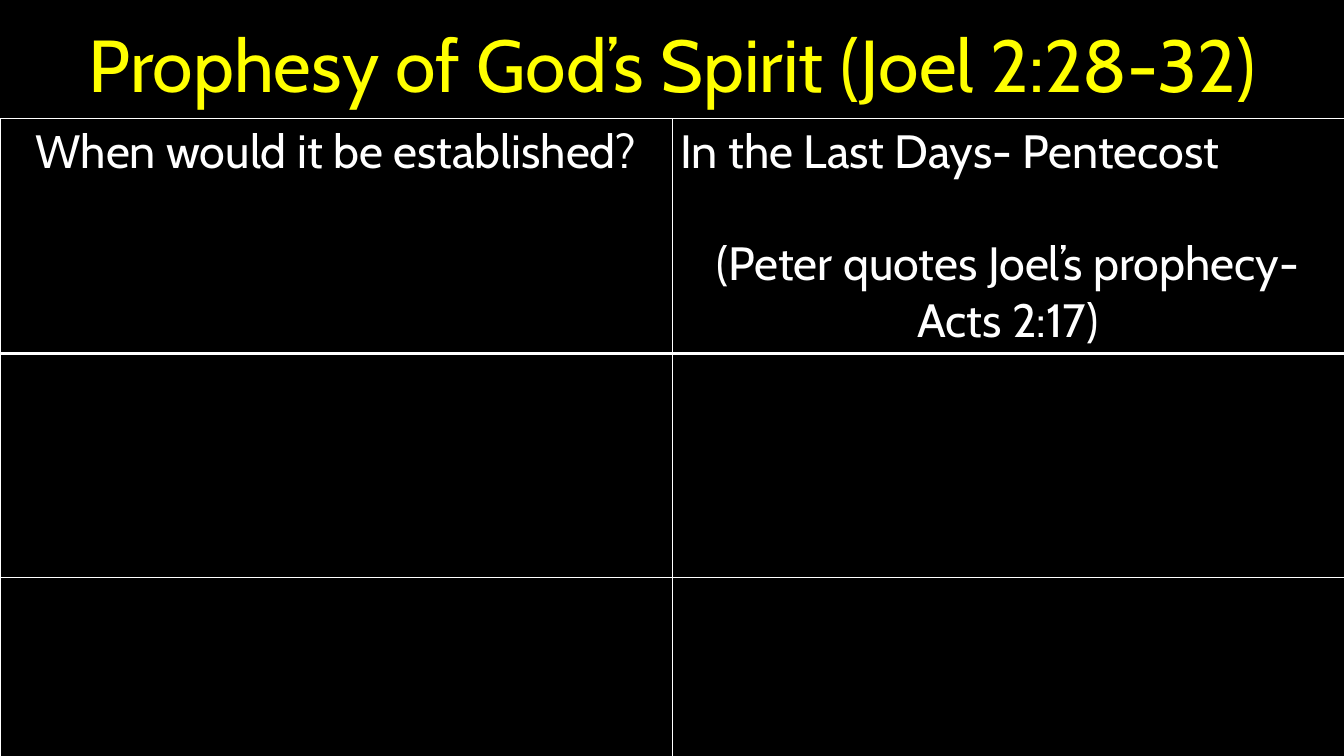
"""Build the slide on the prophecy of Joel with its question table."""
from dataclasses import dataclass

from lxml.etree import SubElement as Sub
from pptx import Presentation
from pptx.dml.color import RGBColor as Rgb
from pptx.enum.text import MSO_ANCHOR as Anchor, PP_ALIGN as Align
from pptx.oxml.ns import qn
from pptx.util import Emu, Pt


@dataclass(frozen=True)
class Theme:
    font: str = "Cabin"
    back: str = "000000"
    head: str = "FFFF00"
    text: str = "FFFFFF"
    rule: str = "FFFFFF"
    big: int = 63
    body: int = 40
    thin: int = 1
    thick: int = 3


def px(num):
    return Emu(round(num * 914400 / 84))


class Deck:
    def __init__(self, theme, wide, high):
        self.theme = theme
        self.prs = Presentation()
        self.prs.slide_width, self.prs.slide_height = px(wide), px(high)
        self.slide = self.prs.slides.add_slide(self.prs.slide_layouts[5])
        self.paint(self.slide.background.fill, theme.back)

    def paint(self, fill, color):
        fill.solid()
        fill.fore_color.rgb = Rgb.from_string(color)

    def add_text(self, para, text, size, color, align=Align.CENTER):
        para.alignment = align
        run = para.add_run()
        run.text = text
        run.font.name = self.theme.font
        run.font.size = Pt(size)
        run.font.bold = False
        run.font.color.rgb = Rgb.from_string(color)

    def title(self, text, left, top, wide, high):
        shape = self.slide.shapes.title
        shape.left, shape.top = px(left), px(top)
        shape.width, shape.height = px(wide), px(high)
        frame = shape.text_frame
        frame.word_wrap = True
        frame.vertical_anchor = Anchor.MIDDLE
        frame.margin_left = frame.margin_right = px(12)
        frame.margin_top = frame.margin_bottom = px(6)
        self.add_text(frame.paragraphs[0], text, self.theme.big, self.theme.head)

    def edge(self, cell, side, width):
        line = Sub(cell._tc.get_or_add_tcPr(), qn("a:ln" + side), w=str(Pt(width)))
        Sub(Sub(line, qn("a:solidFill")), qn("a:srgbClr"), val=self.theme.rule)

    def table(self, left, top, cols, rows):
        frame = self.slide.shapes.add_table(
            len(rows), len(cols), px(left), px(top), px(sum(cols)), px(sum(rows)))
        grid = frame.table
        grid.first_row = grid.horz_banding = False
        for col, wide in zip(grid.columns, cols):
            col.width = px(wide)
        for num, (row, high) in enumerate(zip(grid.rows, rows)):
            row.height = px(high)
            heavy = {0: "B", 1: "T"}.get(num)
            for cell in row.cells:
                for side in "LRTB":
                    thick = side == heavy
                    self.edge(cell, side, self.theme.thick if thick else self.theme.thin)
                self.paint(cell.fill, self.theme.back)
        return grid

    def fill(self, cell, *lines, gap=0):
        frame = cell.text_frame
        for num, (text, align) in enumerate(lines):
            para = frame.add_paragraph() if num else frame.paragraphs[0]
            para.space_before = Pt(gap if num else 0)
            self.add_text(para, text, self.theme.body, self.theme.text, align)


def main():
    deck = Deck(Theme(), 1344, 756)
    deck.title("Prophesy of God’s Spirit (Joel 2:28-32)", 0, 0, 1344, 126)
    grid = deck.table(0, 119, [672] * 2, [224, 224, 275])
    deck.fill(grid.cell(0, 0), ("When would it be established?", Align.CENTER))
    deck.fill(
        grid.cell(0, 1),
        ("In the Last Days- Pentecost", Align.LEFT),
        ("(Peter quotes Joel’s prophecy- Acts 2:17)", Align.CENTER),
        gap=48)
    deck.prs.save("out.pptx")


if __name__ == "__main__":
    main()
